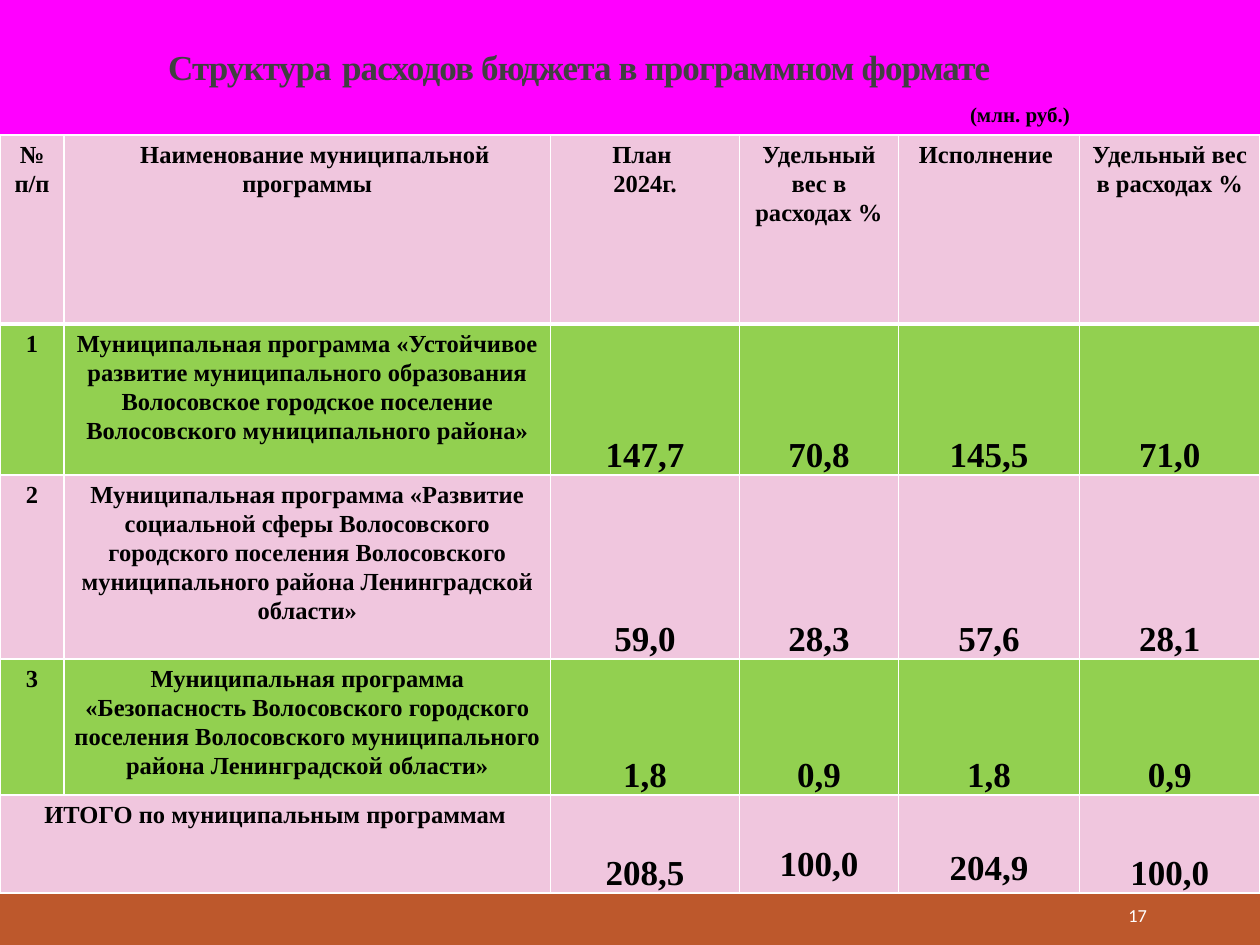
from lxml import etree
from pptx import Presentation
from pptx.dml.color import RGBColor
from pptx.enum.shapes import MSO_SHAPE
from pptx.enum.text import MSO_ANCHOR, PP_ALIGN
from pptx.oxml.ns import qn
from pptx.util import Inches, Pt

LEFT, CENTER, RIGHT = PP_ALIGN.LEFT, PP_ALIGN.CENTER, PP_ALIGN.RIGHT
TOP, MIDDLE, BOTTOM = MSO_ANCHOR.TOP, MSO_ANCHOR.MIDDLE, MSO_ANCHOR.BOTTOM
RECTANGLE = MSO_SHAPE.RECTANGLE

MAGENTA = RGBColor(0xFF, 0x00, 0xFF)
RUST = RGBColor(0xBD, 0x58, 0x2C)
PINK = RGBColor(0xF0, 0xC6, 0xDE)
GREEN = RGBColor(0x92, 0xD0, 0x50)
DARK_GRAY = RGBColor(0x40, 0x40, 0x40)
BLACK = RGBColor(0x00, 0x00, 0x00)
WHITE = RGBColor(0xFF, 0xFF, 0xFF)

SERIF = "Times New Roman"
COLUMN_WIDTHS = [0.51, 3.86, 1.5, 1.26, 1.44, 1.43]
ROW_HEIGHTS = [1.5, 1.2, 1.46, 1.08, 0.76]
ROWS = [
    ["№\nп/п", "Наименование муниципальной программы", "План \n2024г.",
     "Удельный вес в расходах %", "Исполнение ", "Удельный вес в расходах %"],
    ["1", "Муниципальная программа «Устойчивое развитие муниципального образования "
     "Волосовское городское поселение Волосовского муниципального района»",
     "147,7", "70,8", "145,5", "71,0"],
    ["2", "Муниципальная программа «Развитие социальной сферы Волосовского городского "
     "поселения Волосовского муниципального района Ленинградской области»",
     "59,0", "28,3", "57,6", "28,1"],
    ["3", "Муниципальная программа «Безопасность Волосовского городского поселения "
     "Волосовского муниципального района Ленинградской области»",
     "1,8", "0,9", "1,8", "0,9"],
    ["ИТОГО по муниципальным программам", "", "208,5", "100,0", "204,9", "100,0"],
]
TOTAL_ROW = len(ROWS) - 1
TEXT_INSETS = (0.07, 0.04, 0.07, 0.04)
VALUE_INSETS = (0.01, 0.01, 0.01, 0)


def style_span(span, size, color, font=SERIF, bold=True):
    span.font.size = Pt(size)
    span.font.name = font
    span.font.bold = bold
    span.font.color.rgb = color


def add_text(page, bounds, text, size, color, align=LEFT, anchor=TOP, font=SERIF, bold=True):
    box = page.shapes.add_textbox(*map(Inches, bounds))
    frame = box.text_frame
    frame.word_wrap = True
    frame.vertical_anchor = anchor
    frame.text = text
    para = frame.paragraphs[0]
    para.alignment = align
    style_span(para.runs[0], size, color, font, bold)
    return para


def add_title(page):
    para = add_text(page, (0.09, 0.15, 9.01, 0.61), "Структура", 20, DARK_GRAY, CENTER, BOTTOM)
    para.line_spacing = 0.85
    for text, size in ((" ", 24), ("расходов бюджета в программном формате", 20)):
        span = para.add_run()
        span.text = text
        style_span(span, size, DARK_GRAY)
    for span in para.runs:
        span.font._element.set("spc", "-50")


def add_footer_bar(page):
    bar = page.shapes.add_shape(RECTANGLE, 0, Inches(7), Inches(10), Inches(0.5))
    bar.shadow.inherit = False
    bar.fill.solid()
    bar.fill.fore_color.rgb = RUST
    bar.line.fill.background()


def set_borders(cell, row):
    heavy_sides = {0: "lnB", 1: "lnT"}
    properties = cell._tc.get_or_add_tcPr()
    for side in ("lnL", "lnR", "lnT", "lnB"):
        width = 3 if heavy_sides.get(row) == side else 1
        line = etree.SubElement(properties, qn(f"a:{side}"), w=str(Pt(width)))
        fill = etree.SubElement(line, qn("a:solidFill"))
        etree.SubElement(fill, qn("a:srgbClr"), val=str(WHITE))


def place_cell_text(cell, row, column):
    is_value = row > 0 and column > 1
    insets = VALUE_INSETS if is_value else TEXT_INSETS
    anchor = BOTTOM if is_value else TOP
    if (row, column) == (TOTAL_ROW, 3):
        insets, anchor = (0.07, 0.38, 0.07, 0.04), TOP
    elif (row, column) == (TOTAL_ROW, 4):
        insets = TEXT_INSETS
    cell.vertical_anchor = anchor
    cell.margin_left, cell.margin_top, cell.margin_right, cell.margin_bottom = map(Inches, insets)
    for para in cell.text_frame.paragraphs:
        para.alignment = CENTER
        para.line_spacing = 1.07
        for span in para.runs:
            style_span(span, 20 if is_value else 14, BLACK)


def add_program_table(page):
    frame = page.shapes.add_table(len(ROWS), len(COLUMN_WIDTHS), 0, Inches(1.07),
                                  Inches(sum(COLUMN_WIDTHS)), Inches(sum(ROW_HEIGHTS)))
    table = frame.table
    for column, width in zip(table.columns, COLUMN_WIDTHS):
        column.width = Inches(width)
    for row, height in zip(table.rows, ROW_HEIGHTS):
        row.height = Inches(height)
    for row, texts in enumerate(ROWS):
        for column, text in enumerate(texts):
            cell = table.cell(row, column)
            cell.text_frame.text = text
            place_cell_text(cell, row, column)
            set_borders(cell, row)
            cell.fill.solid()
            cell.fill.fore_color.rgb = GREEN if row % 2 else PINK
    table.cell(TOTAL_ROW, 0).merge(table.cell(TOTAL_ROW, 1))
    name_para = table.cell(0, 1).text_frame.paragraphs[0]
    name_para._p.get_or_add_pPr().set("indent", str(Inches(0.12)))


def main():
    deck = Presentation()
    deck.slide_width = Inches(10)
    deck.slide_height = Inches(7.5)
    page = deck.slides.add_slide(deck.slide_layouts[6])
    page.background.fill.solid()
    page.background.fill.fore_color.rgb = MAGENTA
    add_footer_bar(page)
    add_title(page)
    add_text(page, (8.12, 7.06, 1.08, 0.4), "17", 10.5, WHITE, RIGHT, MIDDLE, "Calibri", False)
    add_text(page, (7.6, 0.76, 1.22, 0.3), "(млн. руб.)", 12, BLACK)
    add_program_table(page)
    deck.save("out.pptx")


if __name__ == "__main__":
    main()
